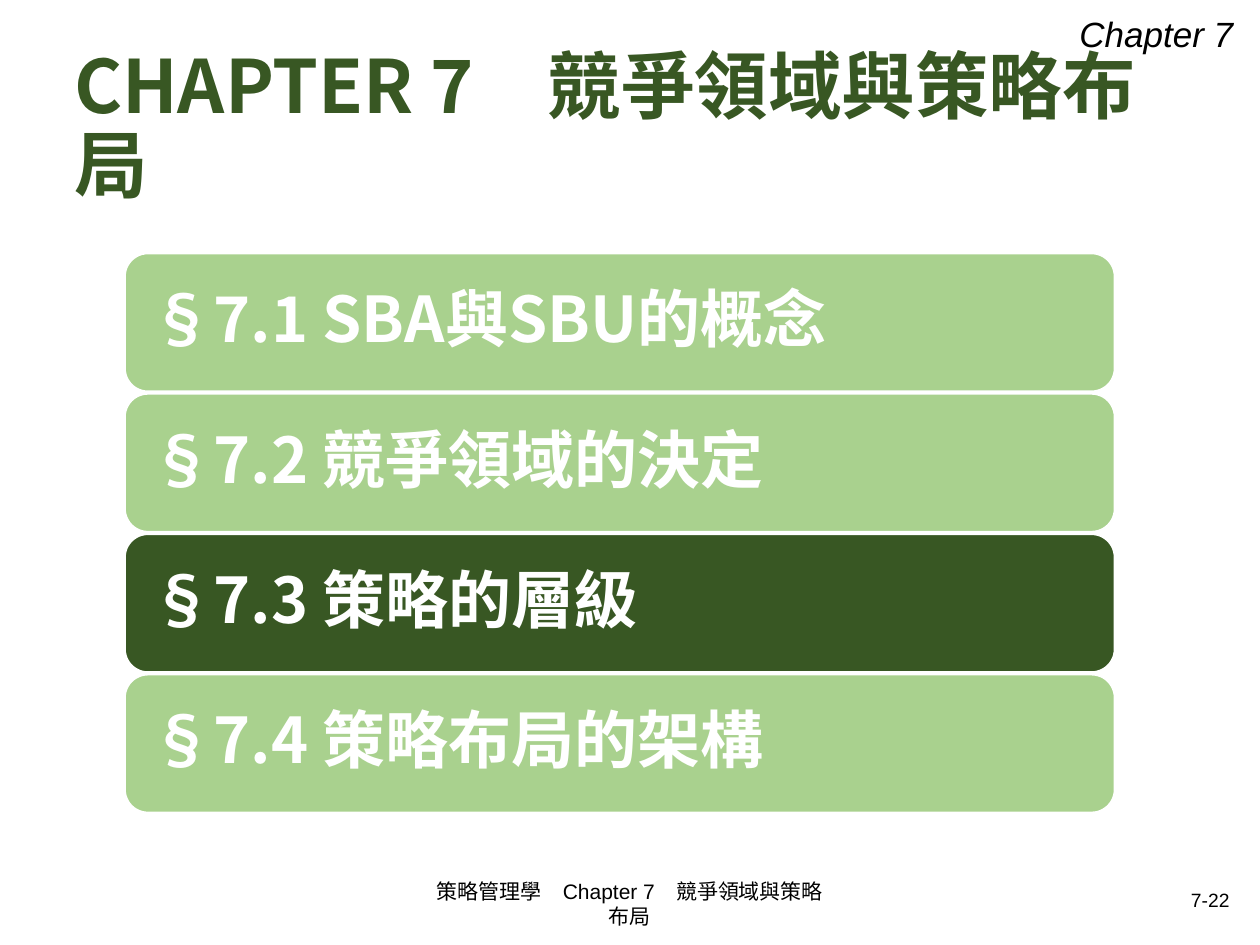
from lxml.etree import SubElement
from pptx import Presentation
from pptx.dml.color import RGBColor
from pptx.enum.shapes import MSO_SHAPE
from pptx.enum.text import MSO_ANCHOR, MSO_AUTO_SIZE, PP_ALIGN
from pptx.oxml.ns import qn
from pptx.util import Cm, Pt

# Content
TITLE = "CHAPTER 7 競爭領域與策略布局".replace("7 ", "7　")
CHAPTER = "Chapter 7"
FOOTER = "策略管理學　Chapter 7　競爭領域與策略布局"
PAGE = "7-22"
SECTIONS = [
    "§7.1 SBA與SBU的概念",
    "§7.2 競爭領域的決定",
    "§7.3 策略的層級",
    "§7.4 策略布局的架構",
]
CURRENT = 2

# Style and section layout (cm)
HEADING_FONT, BODY_FONT = "Noto Sans CJK SC", "Arial"
DARK, LIGHT, WHITE, BLACK = "385723", "A9D18E", "FFFFFF", "000000"
LEFT, TOP, WIDTH, HEIGHT, PITCH = 2.52, 5.11, 19.95, 2.78, 2.83


def color(hex_value):
    return RGBColor.from_string(hex_value)


def write(shape, text, size, font=BODY_FONT, fill=BLACK, bold=False,
          italic=False, align=PP_ALIGN.LEFT, anchor=MSO_ANCHOR.MIDDLE,
          spacing=1.0, wrap=True, fit=MSO_AUTO_SIZE.NONE):
    frame = shape.text_frame
    frame.word_wrap = wrap
    frame.auto_size = fit
    frame.vertical_anchor = anchor
    paragraph = frame.paragraphs[0]
    paragraph.alignment = align
    paragraph.line_spacing = spacing
    run = paragraph.add_run()
    run.text = text
    run.font.size = Pt(size)
    run.font.bold = bold
    run.font.italic = italic
    run.font.color.rgb = color(fill)
    run.font.name = font
    # East Asian characters need their own typeface
    SubElement(run.font._element, qn("a:ea"), typeface=HEADING_FONT)


def box(left, top, width, height):
    return slide.shapes.add_textbox(Cm(left), Cm(top), Cm(width), Cm(height))


presentation = Presentation()
presentation.slide_width, presentation.slide_height = Cm(25.4), Cm(19.05)
slide = presentation.slides.add_slide(presentation.slide_layouts[5])

# Footer and page number
write(box(8.41, 17.7, 8.58, 1.02), FOOTER, 12, align=PP_ALIGN.CENTER)
write(box(17.93, 17.75, 7.11, 0.76), PAGE, 11, align=PP_ALIGN.RIGHT)

# Title and chapter mark
title = slide.shapes.title
title.left, title.top = Cm(1.24), Cm(1.57)
title.width, title.height = Cm(22.91), Cm(2.08)
write(title, TITLE, 42, font=HEADING_FONT, fill=DARK, bold=True, spacing=0.9)
write(box(21.51, 0.13, 3.63, 1.12), CHAPTER, 20, italic=True,
      anchor=MSO_ANCHOR.TOP, wrap=False, fit=MSO_AUTO_SIZE.SHAPE_TO_FIT_TEXT)

# Section bars, the current one dark
for index, section in enumerate(SECTIONS):
    bar = slide.shapes.add_shape(
        MSO_SHAPE.ROUNDED_RECTANGLE, Cm(LEFT), Cm(TOP + index * PITCH),
        Cm(WIDTH), Cm(HEIGHT))
    bar.shadow.inherit = False
    bar.fill.solid()
    bar.fill.fore_color.rgb = color(DARK if index == CURRENT else LIGHT)
    bar.line.color.rgb = color(WHITE)
    bar.line.width = Pt(1)
    frame = bar.text_frame
    frame.margin_left = frame.margin_right = Cm(0.38)
    frame.margin_top = frame.margin_bottom = Cm(0.38)
    write(bar, section, 36, font=HEADING_FONT, fill=WHITE, bold=True,
          spacing=0.9)

presentation.save("out.pptx")
